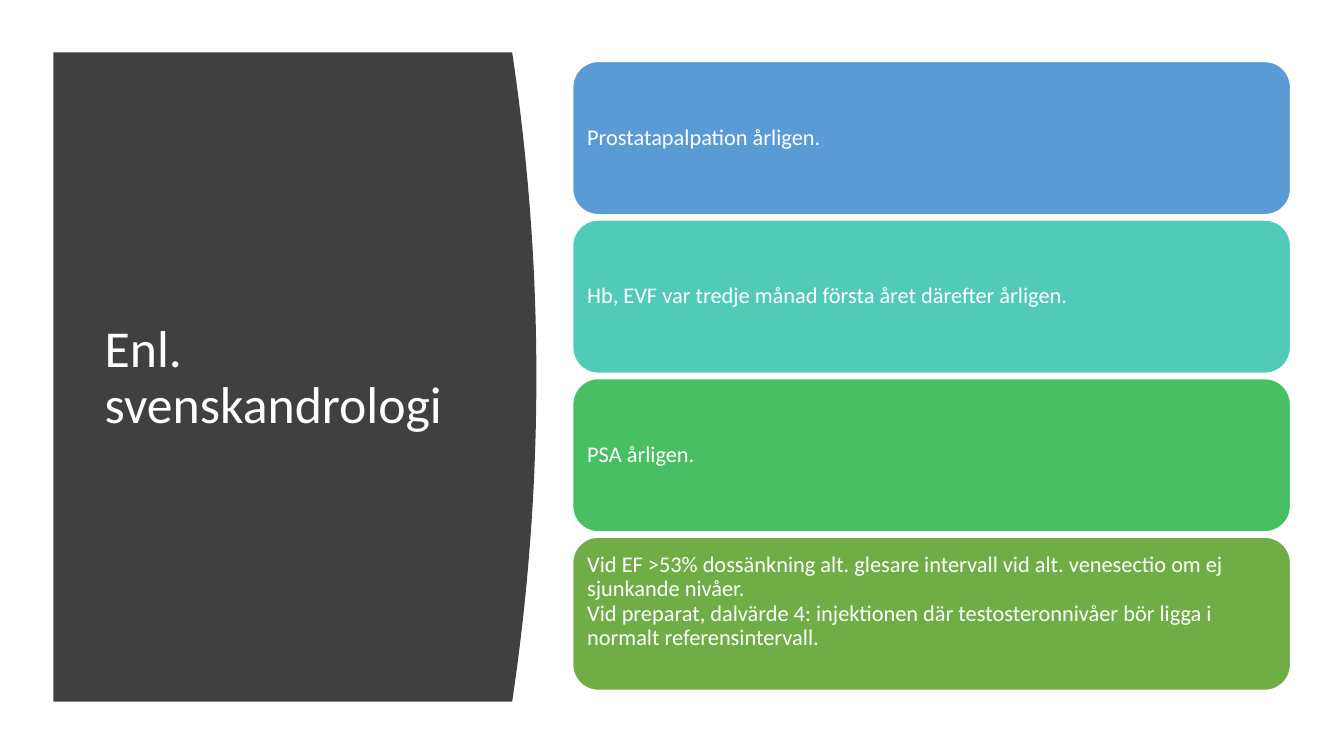
from pptx import Presentation
from pptx.dml.color import RGBColor
from pptx.enum.shapes import MSO_SHAPE
from pptx.enum.text import MSO_ANCHOR, PP_ALIGN
from pptx.util import Inches, Pt

FONT = "Calibri"
WHITE = "FFFFFF"
DARK = "404040"

# Cards: fill, text, bottom inset (a larger one lifts the text)
CARDS = [
    ("5B9BD5", "Prostatapalpation årligen.", 0.07),
    ("52CAB8", "Hb, EVF var tredje månad första året därefter årligen.", 0.07),
    ("49BF64", "PSA årligen.", 0.07),
    ("70AD47", "Vid EF >53% dossänkning alt. glesare intervall vid alt. "
     "venesectio om ej sjunkande nivåer.\n"
     "Vid preparat, dalvärde 4: injektionen där testosteronnivåer bör "
     "ligga i normalt referensintervall.", 0.31),
]


def color(code):
    return RGBColor.from_string(code)


def write(shape, text, size=16, inset=0.07, bottom=0.07):
    frame = shape.text_frame
    frame.word_wrap = True
    frame.vertical_anchor = MSO_ANCHOR.MIDDLE
    frame.margin_left = frame.margin_right = frame.margin_top = Inches(inset)
    frame.margin_bottom = Inches(bottom)
    para = frame.paragraphs[0]
    para.text = text
    para.alignment = PP_ALIGN.LEFT
    para.line_spacing = 0.9
    for run in para.runs:
        run.font.name = FONT
        run.font.size = Pt(size)
        run.font.color.rgb = color(WHITE)


def paint(shape, fill, line=None):
    shape.shadow.inherit = False
    shape.fill.solid()
    shape.fill.fore_color.rgb = color(fill)
    if line:
        shape.line.color.rgb = color(line)
        shape.line.width = Pt(1)
    else:
        shape.line.fill.background()


def panel(slide, left, top, right, bottom, bulge, steps=40):
    """Draw a block whose right edge bows outward as a parabola."""
    half = (bottom - top) / 2
    edge = []
    for step in range(steps + 1):
        pos = 2 * step / steps - 1
        x = right + bulge * (1 - pos ** 2)
        edge.append((Inches(x), Inches(top + half * (pos + 1))))
    pen = slide.shapes.build_freeform(Inches(left), Inches(top))
    pen.add_line_segments(edge + [(Inches(left), Inches(bottom))], close=True)
    paint(pen.convert_to_shape(), DARK)


def title(slide, text):
    box = slide.shapes.add_textbox(
        Inches(0.94), Inches(1.11), Inches(3.74), Inches(5.24))
    write(box, text, size=37, inset=0.1, bottom=0.05)


def card(slide, top, fill, text, bottom):
    box = slide.shapes.add_shape(
        MSO_SHAPE.ROUNDED_RECTANGLE,
        Inches(5.68), Inches(top), Inches(7.12), Inches(1.52))
    paint(box, fill, line=WHITE)
    write(box, text, bottom=bottom)


def main():
    deck = Presentation()
    deck.slide_width = Inches(13.33)
    deck.slide_height = Inches(7.5)
    slide = deck.slides.add_slide(deck.slide_layouts[6])

    # Dark panel with the title
    panel(slide, 0.53, 0.52, 5.08, 6.96, bulge=0.24)
    title(slide, "Enl. svenskandrologi")

    # Stack of cards
    for row, (fill, text, bottom) in enumerate(CARDS):
        card(slide, 0.61 + 1.573 * row, fill, text, bottom)

    deck.save("out.pptx")


if __name__ == "__main__":
    main()
